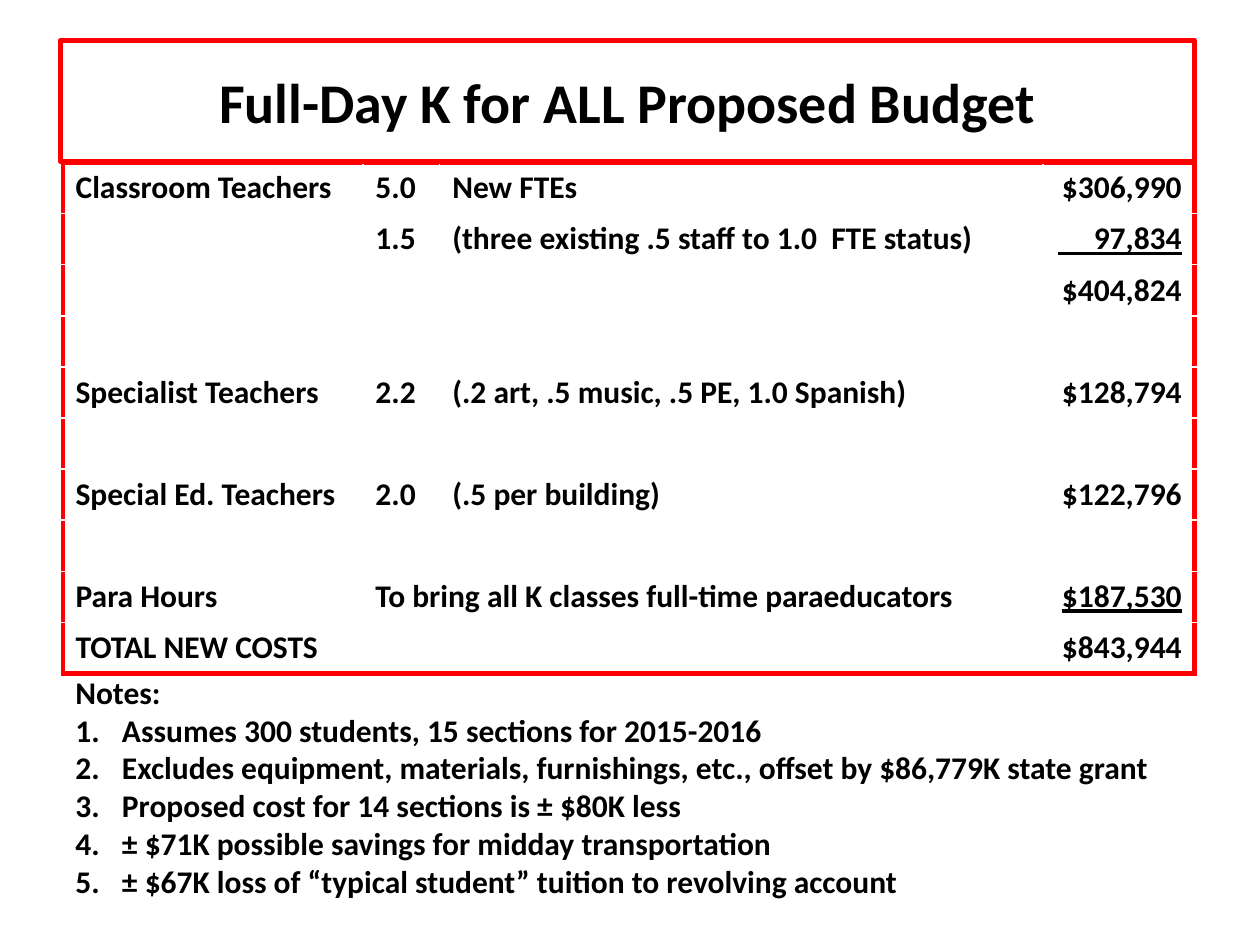
from dataclasses import dataclass

from lxml import etree
from pptx import Presentation
from pptx.dml.color import RGBColor
from pptx.enum.shapes import MSO_SHAPE
from pptx.enum.text import MSO_ANCHOR, PP_ALIGN
from pptx.oxml.ns import qn
from pptx.util import Inches, Pt

RECTANGLE = MSO_SHAPE.RECTANGLE
MIDDLE = MSO_ANCHOR.MIDDLE
LEFT, CENTER, RIGHT = PP_ALIGN.LEFT, PP_ALIGN.CENTER, PP_ALIGN.RIGHT


@dataclass(frozen=True)
class Theme:
    font: str = "Calibri"
    ink: RGBColor = RGBColor(0, 0, 0)
    paper: RGBColor = RGBColor(255, 255, 255)
    frame: RGBColor = RGBColor(255, 0, 0)
    frame_width: int = Pt(3)
    title_size: int = Pt(32)
    body_size: int = Pt(18)


THEME = Theme()
TITLE = "Full-Day K for ALL Proposed Budget"
BUDGET = [
    ("Classroom Teachers", "5.0", "New FTEs", "$306,990"),
    ("", "1.5", "(three existing .5 staff to 1.0  FTE status)", "     97,834"),
    ("", "", "", "$404,824"),
    ("", "", "", ""),
    ("Specialist Teachers", "2.2", "(.2 art, .5 music, .5 PE, 1.0 Spanish)", "$128,794"),
    ("", "", "", ""),
    ("Special Ed. Teachers", "2.0", "(.5 per building)", "$122,796"),
    ("", "", "", ""),
    ("Para Hours", "To bring all K classes full-time paraeducators", None, "$187,530"),
    ("TOTAL NEW COSTS", None, None, "$843,944"),
]
SUBTOTALLED = {"     97,834", "$187,530"}
COLUMN_WIDTHS = (2.38, 0.61, 4.79, 1.2)
ROW_HEIGHT = 0.4
NOTES_HEADING = "Notes:"
NOTES = [
    "Assumes 300 students, 15 sections for 2015-2016",
    "Excludes equipment, materials, furnishings, etc., offset by $86,779K state grant",
    "Proposed cost for 14 sections is ± $80K less",
    "± $71K possible savings for midday transportation",
    "± $67K loss of “typical student” tuition to revolving account",
]
NOTE_INDENT = Inches(0.37)


def write(paragraph, text, size=THEME.body_size, align=LEFT, underline=None):
    paragraph.alignment = align
    run = paragraph.add_run()
    run.text = text
    run.font.name = THEME.font
    run.font.size = size
    run.font.bold = True
    run.font.underline = underline
    run.font.color.rgb = THEME.ink


def border(cell, sides):
    properties = cell._tc.get_or_add_tcPr()
    for position, side in enumerate(sides):
        line = etree.Element(qn(f"a:ln{side}"), w=str(THEME.frame_width))
        fill = etree.SubElement(line, qn("a:solidFill"))
        etree.SubElement(fill, qn("a:srgbClr"), val=str(THEME.frame))
        properties.insert(position, line)


def add_title(slide):
    title = slide.shapes.add_shape(
        RECTANGLE, Inches(0.48), Inches(0.32), Inches(9), Inches(0.96))
    title.shadow.inherit = False
    title.fill.background()
    title.line.color.rgb = THEME.frame
    title.line.width = THEME.frame_width
    title.text_frame.word_wrap = True
    title.text_frame.vertical_anchor = MIDDLE
    write(title.text_frame.paragraphs[0], TITLE, THEME.title_size, CENTER)


def add_budget(slide):
    last_row, last_column = len(BUDGET) - 1, len(COLUMN_WIDTHS) - 1
    budget = slide.shapes.add_table(
        len(BUDGET), len(COLUMN_WIDTHS), Inches(0.5), Inches(1.29),
        Inches(sum(COLUMN_WIDTHS)), Inches(ROW_HEIGHT * len(BUDGET))).table
    budget.first_row = budget.horz_banding = False
    for column, width in zip(budget.columns, COLUMN_WIDTHS):
        column.width = Inches(width)
    for r, entries in enumerate(BUDGET):
        budget.rows[r].height = Inches(ROW_HEIGHT)
        for c, entry in enumerate(entries):
            cell = budget.cell(r, c)
            cell.fill.solid()
            cell.fill.fore_color.rgb = THEME.paper
            edges = (("L", c == 0), ("R", c == last_column),
                     ("T", r == 0), ("B", r == last_row))
            border(cell, [side for side, outer in edges if outer])
            if entry:
                write(cell.text_frame.paragraphs[0], entry,
                      align=RIGHT if c == last_column else LEFT,
                      underline=True if entry in SUBTOTALLED else None)
        spanned = [c for c, entry in enumerate(entries) if entry is None]
        if spanned:
            budget.cell(r, spanned[0] - 1).merge(budget.cell(r, spanned[-1]))


def add_notes(slide):
    frame = slide.shapes.add_textbox(
        Inches(0.5), Inches(5.29), Inches(9.1), Inches(2.2)).text_frame
    frame.word_wrap = True
    write(frame.paragraphs[0], NOTES_HEADING)
    for note in NOTES:
        paragraph = frame.add_paragraph()
        write(paragraph, note)
        properties = paragraph._p.get_or_add_pPr()
        properties.set("marL", str(NOTE_INDENT))
        properties.set("indent", str(-NOTE_INDENT))
        etree.SubElement(properties, qn("a:buFont"), typeface=THEME.font)
        etree.SubElement(properties, qn("a:buAutoNum"), type="arabicPeriod")


def main():
    """Build the kindergarten budget slide."""
    deck = Presentation()
    deck.slide_width, deck.slide_height = Inches(10), Inches(7.5)
    slide = deck.slides.add_slide(deck.slide_layouts[6])
    add_budget(slide)
    add_title(slide)
    add_notes(slide)
    deck.save("out.pptx")


if __name__ == "__main__":
    main()
